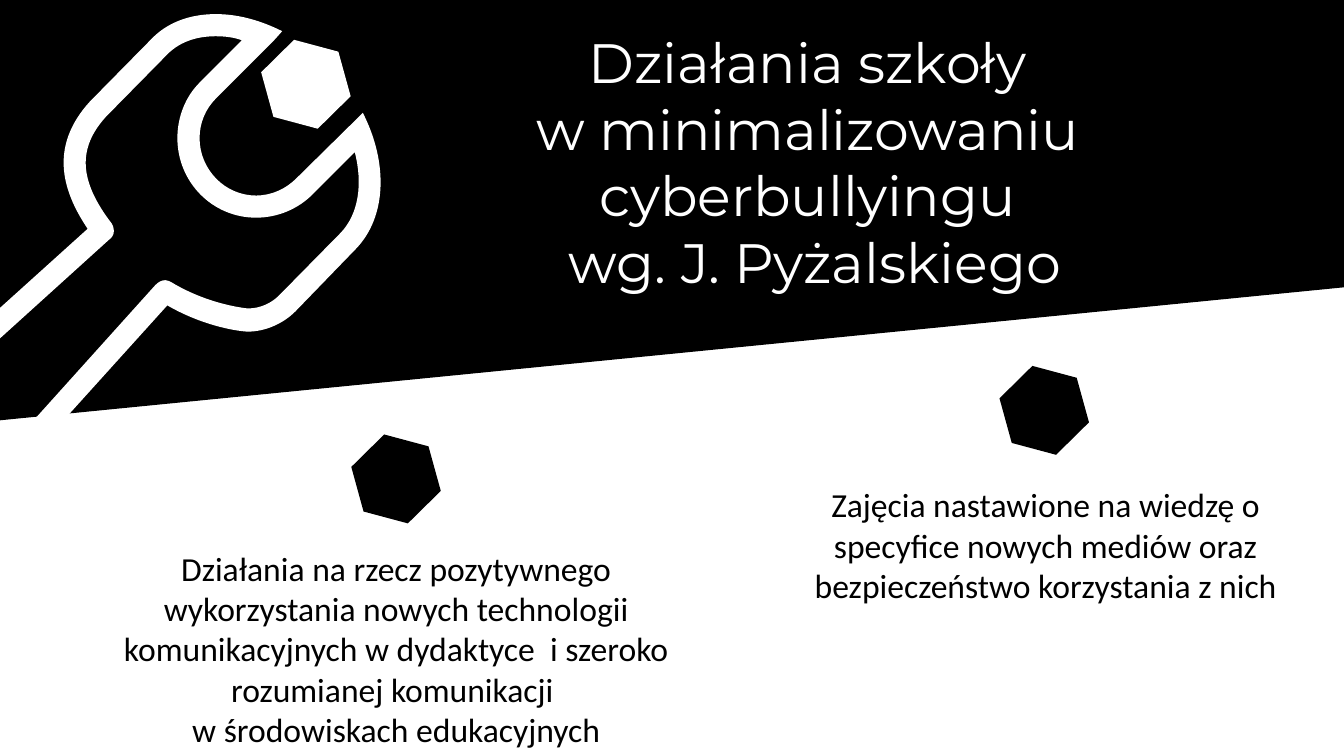
from copy import deepcopy
from dataclasses import dataclass

from lxml.etree import SubElement
from pptx import Presentation
from pptx.dml.color import RGBColor
from pptx.enum.shapes import MSO_SHAPE
from pptx.enum.text import MSO_ANCHOR, MSO_AUTO_SIZE, PP_ALIGN
from pptx.oxml.ns import qn
from pptx.util import Pt


@dataclass(frozen=True)
class Theme:
    black: RGBColor = RGBColor(0, 0, 0)
    white: RGBColor = RGBColor(255, 255, 255)
    title_font: str = "Montserrat"
    body_font: str = "Calibri"
    title_size: float = 39.6
    body_size: float = 24


THEME = Theme()
OUTLINE_UNIT = Pt(0.72)  # outlines are drawn in hundredths of an inch

# Header below the straight band, with its slanted edge
SLANT = [(1334, 234), (0, 234), (0, 417), (1334, 285)]

# Wrench: pairs are corners, sixes are cubic curves
WRENCH_RIM = [
    (360, 112), (294, 177),
    (284, 187, 270, 194, 254, 194), (223, 194, 198, 168, 198, 137),
    (198, 122, 204, 108, 214, 98), (271, 41), (280, 31),
    (258, 20, 236, 14, 214, 14), (189, 14, 166, 22, 150, 39), (89, 101),
    (50, 144, 60, 187, 87, 227), (-97, 393),
    (-109, 405, -117, 422, -117, 441), (-117, 478, -86, 508, -49, 508),
    (-31, 508, -14, 501, -2, 489), (166, 303),
    (204, 325, 240, 329, 246, 329), (262, 329, 280, 322, 293, 309),
    (353, 247), (384, 215, 385, 161, 360, 112),
]
WRENCH_HOLLOW = [
    (198, 82), (184, 96, 176, 116, 176, 137),
    (176, 181, 211, 216, 254, 216), (276, 216, 296, 207, 310, 193),
    (352, 151), (360, 182, 356, 212, 338, 231), (277, 293),
    (269, 301, 258, 306, 246, 306), (246, 306, 208, 303, 170, 280),
    (168, 279, 166, 278, 164, 278), (160, 278, 157, 280, 154, 283),
    (-17, 473), (-26, 481, -37, 486, -49, 486),
    (-74, 486, -94, 466, -94, 441), (-94, 428, -89, 417, -81, 409),
    (108, 238), (111, 236, 113, 233, 113, 229),
    (113, 226, 112, 224, 111, 222), (78, 179, 77, 147, 105, 116),
    (165, 55), (180, 39, 200, 36, 214, 36), (223, 36, 232, 37, 240, 40),
]
WRENCH_WIDTH = 495


def paint(shape, color):
    shape.shadow.inherit = False
    shape.fill.solid()
    shape.fill.fore_color.rgb = color
    shape.line.fill.background()


def bend(path, segments):
    """Join the three lines of each six-number segment into one curve."""
    lines = iter(path.findall(qn("a:lnTo")))
    for segment in segments:
        line = next(lines)
        if len(segment) == 2:
            continue
        curve = SubElement(path, qn("a:cubicBezTo"))
        path.replace(line, curve)
        for part in (line, next(lines), next(lines)):
            curve.append(part[0])
            if part.getparent() is not None:
                path.remove(part)


def add_outline(slide, contours, color, width=None):
    builder = slide.shapes.build_freeform(*contours[0][0], scale=OUTLINE_UNIT)
    segments = []
    for number, (start, *rest) in enumerate(contours):
        if number:
            builder.move_to(*start)
        points = [segment[i:i + 2] for segment in rest
                  for i in range(0, len(segment), 2)]
        builder.add_line_segments(points, close=True)
        segments += rest
    shape = builder.convert_to_shape()
    paint(shape, color)
    outline = shape._element.find(".//" + qn("a:path"))
    bend(outline, segments)
    if width:
        # Control points may reach past the visible edge
        outline.set("w", str(width))
        shape.width = width * OUTLINE_UNIT


def add_nut(slide, left, top, color):
    nut = slide.shapes.add_shape(
        MSO_SHAPE.HEXAGON, Pt(left), Pt(top), Pt(66.2), Pt(57))
    nut.adjustments[0] = 0.293
    nut.rotation = 15
    paint(nut, color)


def write(frame, text, *, font, size, color, anchor=MSO_ANCHOR.TOP,
          fit=MSO_AUTO_SIZE.NONE):
    """Fill a frame with one centred paragraph; line feeds become breaks."""
    frame.word_wrap = True
    frame.auto_size = fit
    frame.vertical_anchor = anchor
    paragraph = frame.paragraphs[0]
    paragraph.alignment = PP_ALIGN.CENTER
    paragraph.text = text
    for run in paragraph.runs:
        run.font.name = font
        run.font.size = Pt(size)
        run.font.color.rgb = color
    # Breaks take the run format, so that line heights agree
    run_format = paragraph.runs[0].font._element
    for line_break in paragraph._p.findall(qn("a:br")):
        line_break.append(deepcopy(run_format))


def add_title(slide, text):
    title = slide.shapes.title
    title.left, title.top = Pt(294.1), Pt(6.2)
    title.width, title.height = Pt(576), Pt(218)
    write(title.text_frame, text, font=THEME.title_font,
          size=THEME.title_size, color=THEME.white, anchor=MSO_ANCHOR.MIDDLE)
    # Bring the title in front of the header
    slide.shapes._spTree.append(title._element)


def add_action(slide, text, left, top, width, height, fit=MSO_AUTO_SIZE.NONE):
    box = slide.shapes.add_textbox(Pt(left), Pt(top), Pt(width), Pt(height))
    write(box.text_frame, text, font=THEME.body_font, size=THEME.body_size,
          color=THEME.black, fit=fit)


def main():
    deck = Presentation()
    deck.slide_width, deck.slide_height = Pt(960), Pt(540)
    slide = deck.slides.add_slide(deck.slide_layouts[5])

    # Black header
    header = slide.shapes.add_shape(
        MSO_SHAPE.RECTANGLE, Pt(0), Pt(0), Pt(960), Pt(174))
    paint(header, THEME.black)
    add_outline(slide, [SLANT], THEME.black)
    add_title(slide, "Działania szkoły \nw minimalizowaniu \n"
                     "cyberbullyingu \nwg. J. Pyżalskiego")

    # Actions of the school
    add_action(slide, "Zajęcia nastawione na wiedzę o specyfice nowych mediów "
                      "oraz bezpieczeństwo korzystania z nich",
               551.8, 342.3, 390.2, 113.8)
    add_action(slide, "Działania na rzecz pozytywnego wykorzystania nowych "
                      "technologii komunikacyjnych w dydaktyce  i szeroko "
                      "rozumianej komunikacji \nw środowiskach edukacyjnych",
               53, 387.7, 460, 123.8, fit=MSO_AUTO_SIZE.SHAPE_TO_FIT_TEXT)

    # Wrench with its nut, and a nut above each action
    add_nut(slide, 185.4, 31.7, THEME.white)
    add_outline(slide, [WRENCH_RIM, WRENCH_HOLLOW], THEME.white, WRENCH_WIDTH)
    add_nut(slide, 249.8, 313.6, THEME.black)
    add_nut(slide, 712.8, 264.6, THEME.black)

    deck.save("out.pptx")


if __name__ == "__main__":
    main()
